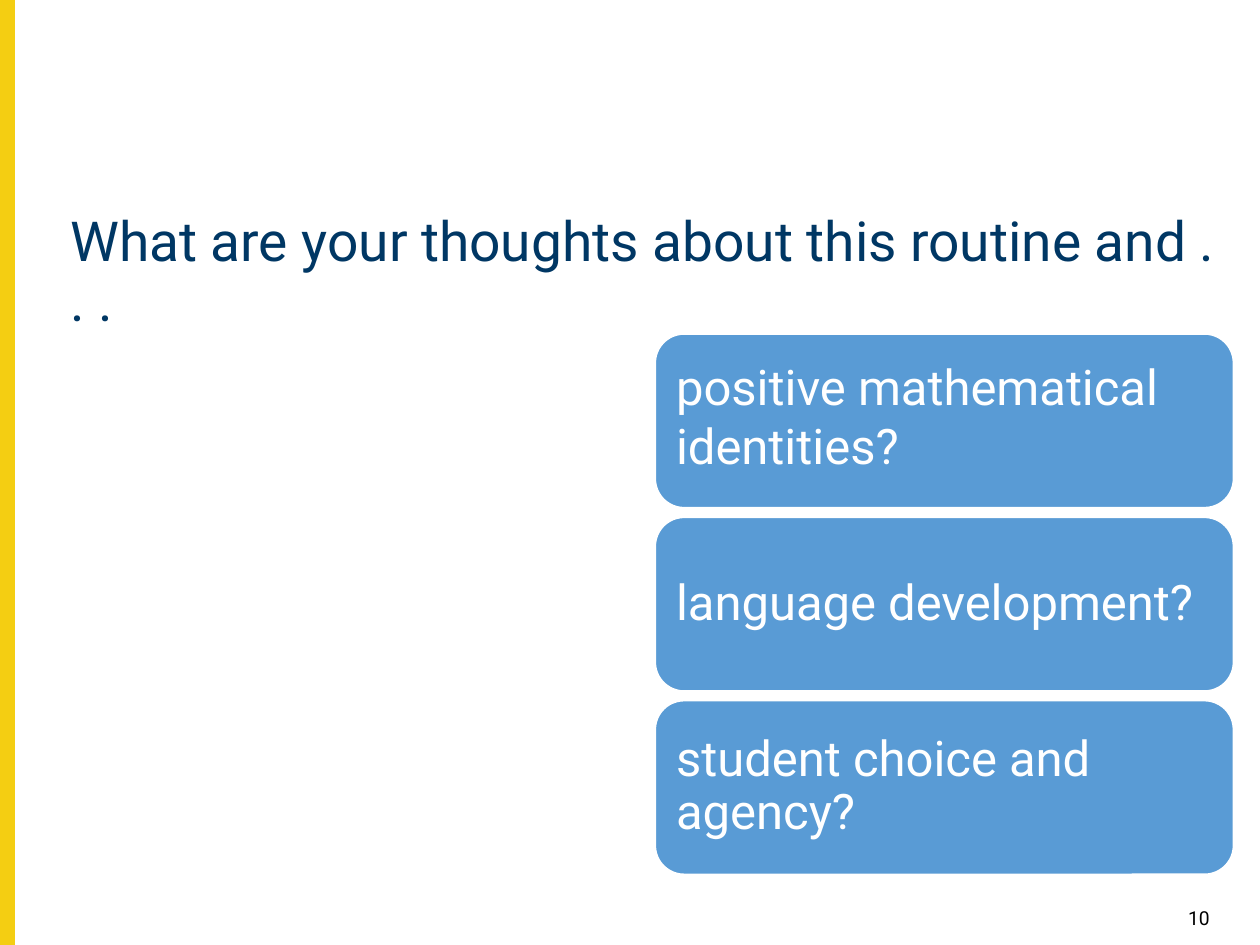
from dataclasses import dataclass

from pptx import Presentation
from pptx.dml.color import RGBColor
from pptx.enum.shapes import MSO_SHAPE
from pptx.enum.text import MSO_ANCHOR, PP_ALIGN
from pptx.util import Inches, Pt


@dataclass(frozen=True)
class Theme:
    font: str = "Roboto"
    yellow: str = "F4CE12"
    navy: str = "003764"
    blue: str = "599BD5"
    white: str = "FFFFFF"
    black: str = "000000"
    title_size: float = 31.5
    card_size: float = 28
    number_size: float = 11


THEME = Theme()
SLIDE_WIDTH, SLIDE_HEIGHT = 10, 7.5

# Column of cards: left edge, first top, size and distance between tops
CARD_LEFT, CARD_TOP = 5.2, 2.65
CARD_WIDTH, CARD_HEIGHT, CARD_PITCH = 4.59, 1.38, 1.455

# Wording, line spacing and extra bottom inset of each card
QUESTIONS = [
    ("positive mathematical identities?", 1.0, 0.08),
    ("language development?", 0.9, 0),
    ("student choice and agency?", 0.9, 0),
]


def write(frame, wording, size, color, spacing=1.0, align=PP_ALIGN.LEFT,
          anchor=MSO_ANCHOR.TOP, inset=0.1, extra_bottom=0):
    frame.text = wording
    frame.word_wrap = True
    frame.vertical_anchor = anchor
    frame.margin_left = frame.margin_right = Inches(0.1)
    frame.margin_top = Inches(inset)
    frame.margin_bottom = Inches(inset + extra_bottom)
    paragraph = frame.paragraphs[0]
    paragraph.alignment = align
    paragraph.line_spacing = spacing
    font = paragraph.runs[0].font
    font.name = THEME.font
    font.size = Pt(size)
    font.color.rgb = RGBColor.from_string(color)


def add_panel(slide, preset, box, fill, outline):
    panel = slide.shapes.add_shape(preset, *map(Inches, box))
    panel.shadow.inherit = False
    panel.fill.solid()
    panel.fill.fore_color.rgb = RGBColor.from_string(fill)
    panel.line.color.rgb = RGBColor.from_string(outline)
    panel.line.width = Pt(1)
    return panel


def add_label(slide, box, wording, size, color, **layout):
    label = slide.shapes.add_textbox(*map(Inches, box))
    write(label.text_frame, wording, size, color, **layout)


def add_question_card(slide, row, wording, spacing, extra_bottom):
    box = (CARD_LEFT, CARD_TOP + row * CARD_PITCH, CARD_WIDTH, CARD_HEIGHT)
    card = add_panel(slide, MSO_SHAPE.ROUNDED_RECTANGLE, box, THEME.blue, THEME.white)
    write(card.text_frame, wording, THEME.card_size, THEME.white, spacing=spacing,
          anchor=MSO_ANCHOR.MIDDLE, extra_bottom=extra_bottom)


def main():
    deck = Presentation()
    deck.slide_width, deck.slide_height = Inches(SLIDE_WIDTH), Inches(SLIDE_HEIGHT)
    slide = deck.slides.add_slide(deck.slide_layouts[6])

    # Yellow edge band
    add_panel(slide, MSO_SHAPE.RECTANGLE, (0, 0, 0.11, SLIDE_HEIGHT),
              THEME.yellow, THEME.yellow)

    # Title and slide number
    add_label(slide, (0.46, 1.6, 9.33, 0.79),
              "What are your thoughts about this routine and . . .",
              THEME.title_size, THEME.navy, spacing=0.9)
    add_label(slide, (9.2, 7.14, 0.5, 0.21), "10", THEME.number_size, THEME.black,
              align=PP_ALIGN.RIGHT, inset=0.05)

    # Question cards
    for row, (wording, spacing, extra_bottom) in enumerate(QUESTIONS):
        add_question_card(slide, row, wording, spacing, extra_bottom)

    deck.save("out.pptx")


if __name__ == "__main__":
    main()
